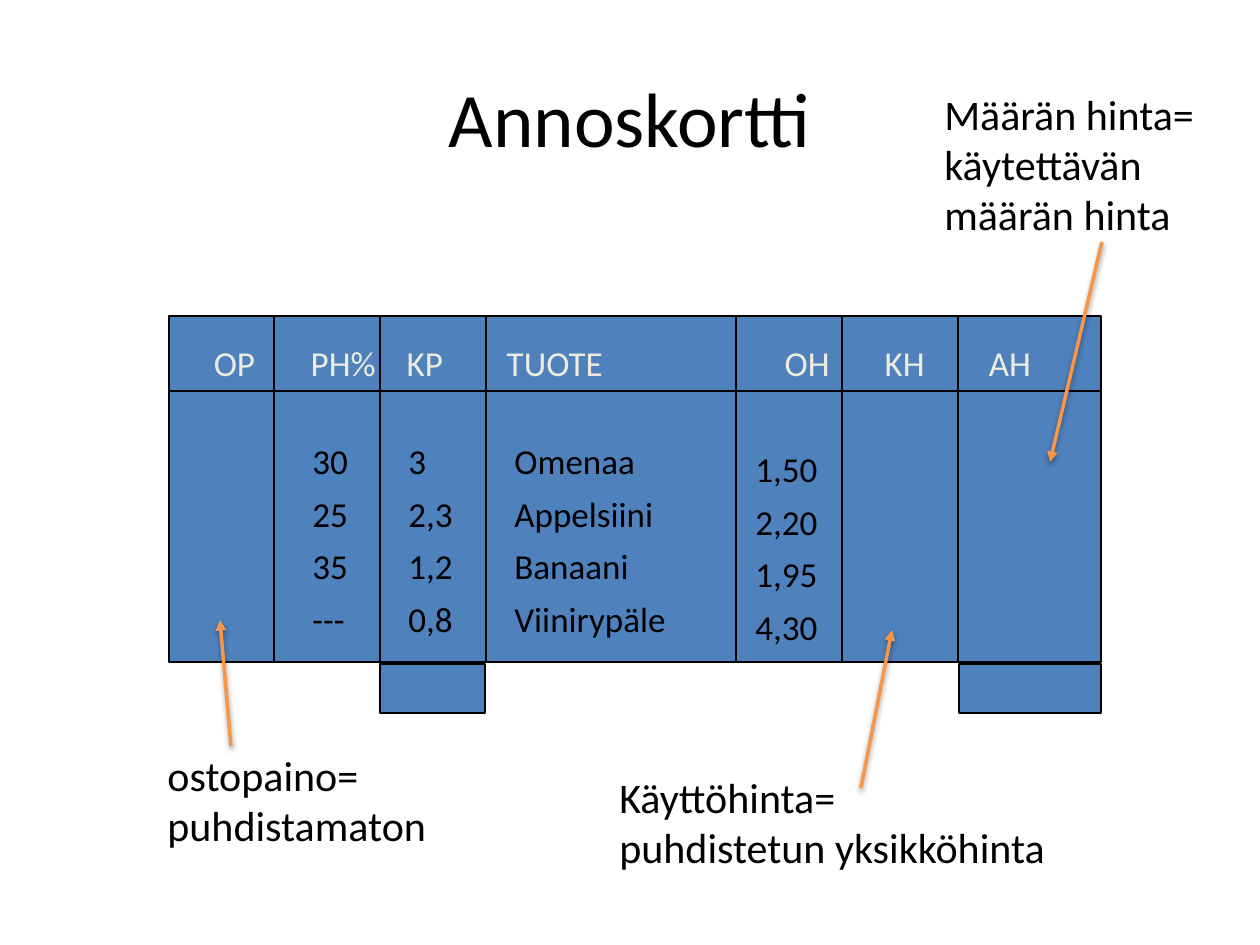
from pptx import Presentation
from pptx.dml.color import RGBColor as RGB
from pptx.enum.shapes import MSO_CONNECTOR as Conn, MSO_SHAPE as Shape
from pptx.enum.text import MSO_ANCHOR as Anchor, MSO_AUTO_SIZE as Fit, PP_ALIGN as Align
from pptx.oxml.ns import qn
from pptx.util import Emu, Pt
from lxml.etree import SubElement as Sub, Element

BLACK = RGB(0x00, 0x00, 0x00)
BLUE = RGB(0x4F, 0x81, 0xBD)
CREAM = RGB(0xEE, 0xEC, 0xE1)
ORANGE = RGB(0xF7, 0x96, 0x46)
FONT = "Calibri"


def px(n):
    return Emu(round(n * 914400 / 126))


class Deck:
    """Holds the style and the current slide."""

    def __init__(self):
        self.prs = Presentation()
        self.prs.slide_width, self.prs.slide_height = px(1260), px(945)
        self.slide = self.prs.slides.add_slide(self.prs.slide_layouts[5])
        self.shapes = self.slide.shapes

    def style(self, par, size, color):
        par.font.name, par.font.size = FONT, Pt(size)
        par.font.color.rgb = color

    def title(self, text, *box):
        head = self.shapes.title
        head.left, head.top, head.width, head.height = map(px, box)
        head.text_frame.text = text
        head.text_frame.vertical_anchor = Anchor.MIDDLE
        par = head.text_frame.paragraphs[0]
        par.alignment = Align.CENTER
        self.style(par, 44, BLACK)

    def rect(self, *box):
        shape = self.shapes.add_shape(Shape.RECTANGLE, *map(px, box))
        shape.shadow.inherit = False
        shape.fill.solid()
        shape.fill.fore_color.rgb = BLUE
        shape.line.color.rgb, shape.line.width = BLACK, Pt(1)

    def line(self, *ends, color=BLACK, width=1):
        line = self.shapes.add_connector(Conn.STRAIGHT, *map(px, ends))
        line.line.color.rgb, line.line.width = color, Pt(width)
        return line

    def rule(self, *ends):
        Sub(self.line(*ends)._element.spPr, qn("a:effectLst"))

    def arrow(self, *ends):
        # Arrows keep the soft shadow of the theme
        line = self.line(*ends, color=ORANGE, width=2)
        Sub(line.line._get_or_add_ln(), qn("a:tailEnd"), type="triangle")

    def text(self, rows, *box, size=24, color=BLACK, space=None, wrap=False):
        frame = self.shapes.add_textbox(*map(px, box)).text_frame
        frame.text = "\n".join(rows)
        frame.word_wrap = wrap
        frame.auto_size = Fit.SHAPE_TO_FIT_TEXT
        for par in frame.paragraphs:
            self.style(par, size, color)
            if space:
                par.line_spacing = space
        return frame

    def heads(self, names, stops, *box):
        text = "".join("\t" + name for name in names)
        frame = self.text([text], *box, size=20, color=CREAM, wrap=True)
        tabs = Element(qn("a:tabLst"))
        for stop in stops:
            start = px(stop - box[0]) - frame.margin_left
            Sub(tabs, qn("a:tab"), pos=str(start), algn="l")
        frame.paragraphs[0]._p.get_or_add_pPr().insert(0, tabs)


def main():
    deck = Deck()
    deck.title("Annoskortti", 63, 38, 1134, 157)

    # Card grid
    left, right, top, base = 169, 1101, 316, 662
    deck.rect(left, top, right - left, base - top)
    deck.rule(left, 391, right, 391)
    for x in (274, 380, 486, 736, 842, 958):
        deck.rule(x, top, x, base)

    # Column values
    for x, y, wide, rows in (
        (502, 423, 186, ("Omenaa", "Appelsiini", "Banaani", "Viinirypäle")),
        (396, 423, 74, ("3", "2,3", "1,2", "0,8")),
        (300, 423, 66, ("30", "25", "35", "---")),
        (743, 431, 90, ("1,50", "2,20", "1,95", "4,30")),
    ):
        deck.text(rows, x, y, wide, 224, size=20, space=1.25, wrap=True)

    # Boxes for the sums
    for x, end in ((380, 485), (959, right)):
        deck.rect(x, 664, end - x, 49)

    # Notes with arrows
    deck.text(("ostopaino=", "puhdistamaton"), 155, 743, 286, 165)
    deck.arrow(231, 746, 220, 620)
    deck.text(("Käyttöhinta=", "puhdistetun yksikköhinta"), 607, 765, 455, 115)
    deck.arrow(861, 788, 892, 630)
    deck.text(("Määrän hinta=", "käytettävän", "määrän hinta"), 932, 82, 277, 165)
    deck.arrow(1102, 242, 1050, 462)

    # Column heads
    deck.heads(("OP", "PH%", "KP", "TUOTE", "OH", "KH", "AH"),
               (214, 311, 407, 507, 785, 885, 989), 165, 335, 880, 54)

    deck.prs.save("out.pptx")


if __name__ == "__main__":
    main()
